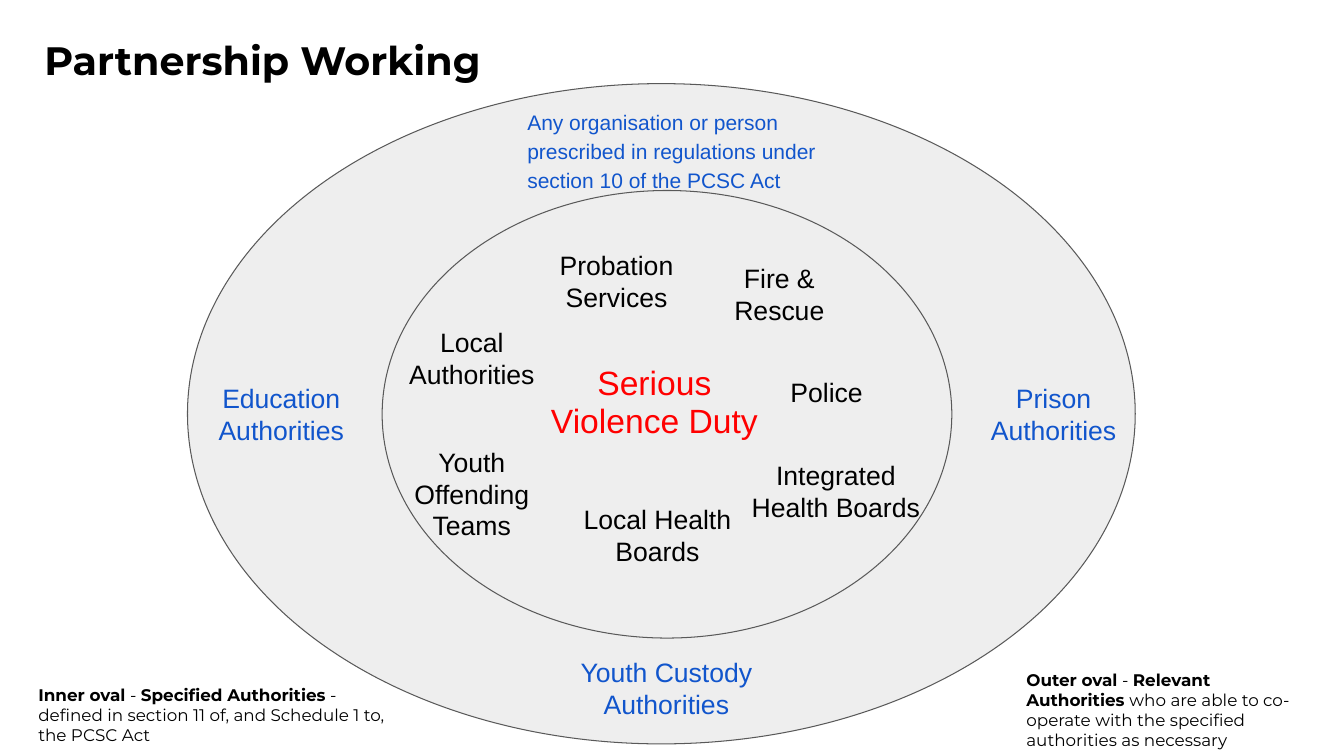
"""Build the Partnership Working slide with nested ovals of authorities."""
from pptx import Presentation
from pptx.dml.color import RGBColor
from pptx.enum.shapes import MSO_SHAPE
from pptx.enum.text import PP_ALIGN
from pptx.util import Inches, Pt

BLACK = RGBColor(0x00, 0x00, 0x00)
RED = RGBColor(0xFF, 0x00, 0x00)
BLUE = RGBColor(0x11, 0x55, 0xCC)
OVAL_FILL = RGBColor(0xEE, 0xEE, 0xEE)
OVAL_LINE = RGBColor(0x59, 0x59, 0x59)

OVALS = [(1.86, 0.83, 9.4, 6.55), (3.79, 1.89, 5.65, 4.44)]

SPECIFIED_AUTHORITIES = [
    ("Fire & Rescue", (7.01, 2.47, 1.44, 0.91)),
    ("Integrated Health Boards", (7.32, 4.42, 1.94, 0.91)),
    ("Local Health Boards", (5.58, 4.86, 1.88, 0.91)),
    ("Local Authorities", (3.91, 3.1, 1.54, 0.91)),
    ("Youth Offending Teams", (3.78, 4.29, 1.8, 1.23)),
    ("Probation Services", (5.31, 2.34, 1.61, 0.91)),
]
RELEVANT_AUTHORITIES = [
    ("Education Authorities", (1.92, 3.66, 1.74, 0.91)),
    ("Prison Authorities", (9.58, 3.66, 1.74, 0.91)),
    ("Youth Custody Authorities", (5.31, 6.38, 2.6, 0.91)),
]
KEY_NOTES = [
    ((0.25, 6.66, 3.82, 0.88), [
        ("Inner oval", True), (" - ", False), ("Specified Authorities", True),
        (" - defined in section 11 of, and Schedule 1 to, the PCSC Act", False)]),
    ((10.05, 6.51, 3.1, 1.08), [
        ("Outer oval", True), (" - ", False), ("Relevant Authorities ", True),
        ("who are able to co-operate with the specified authorities as necessary", False)]),
]


def add_oval(slide, bounds):
    """Draw one grey outlined oval."""
    oval = slide.shapes.add_shape(MSO_SHAPE.OVAL, *map(Inches, bounds))
    oval.shadow.inherit = False
    oval.fill.solid()
    oval.fill.fore_color.rgb = OVAL_FILL
    oval.line.color.rgb = OVAL_LINE
    oval.line.width = Pt(0.75)


def add_text(slide, bounds, text="", size=19, color=BLACK, font="Arial",
             align=PP_ALIGN.LEFT, spacing=1.0):
    """Add a wrapped text box and return its paragraph."""
    frame = slide.shapes.add_textbox(*map(Inches, bounds)).text_frame
    frame.word_wrap = True
    frame.margin_left = frame.margin_right = Inches(0.13)
    frame.margin_top = frame.margin_bottom = Inches(0.13)
    paragraph = frame.paragraphs[0]
    paragraph.text = text
    paragraph.alignment = align
    paragraph.line_spacing = spacing
    paragraph.font.name = font
    paragraph.font.size = Pt(size)
    paragraph.font.color.rgb = color
    return paragraph


def add_key_note(slide, bounds, phrases):
    """Explain an oval with bold and regular phrases."""
    note = add_text(slide, bounds, size=12, font="Montserrat")
    for phrase, bold in phrases:
        run = note.add_run()
        run.text = phrase
        run.font.bold = bold


def main():
    """Compose and save the slide."""
    deck = Presentation()
    deck.slide_width = Inches(13.33)
    deck.slide_height = Inches(7.5)
    slide = deck.slides.add_slide(deck.slide_layouts[6])

    for bounds in OVALS:
        add_oval(slide, bounds)
    title = add_text(slide, (0.31, 0.23, 12.42, 0.83), "Partnership Working",
                     size=28.3, font="Montserrat")
    title.font.bold = True
    add_text(slide, (5.23, 3.49, 2.52, 1.04), "Serious Violence Duty", size=24,
             color=RED, align=PP_ALIGN.CENTER, spacing=0.95)
    add_text(slide, (7.71, 3.6, 1.31, 0.59), "Police")
    for authorities, color in ((SPECIFIED_AUTHORITIES, BLACK), (RELEVANT_AUTHORITIES, BLUE)):
        for authority, bounds in authorities:
            add_text(slide, bounds, authority, color=color, align=PP_ALIGN.CENTER)
    for bounds, phrases in KEY_NOTES:
        add_key_note(slide, bounds, phrases)
    add_text(slide, (5.1, 0.92, 3.58, 1.1),
             "Any organisation or person prescribed in regulations under "
             "section 10 of the PCSC Act", size=15, color=BLUE, spacing=1.15)

    deck.save("out.pptx")


if __name__ == "__main__":
    main()
